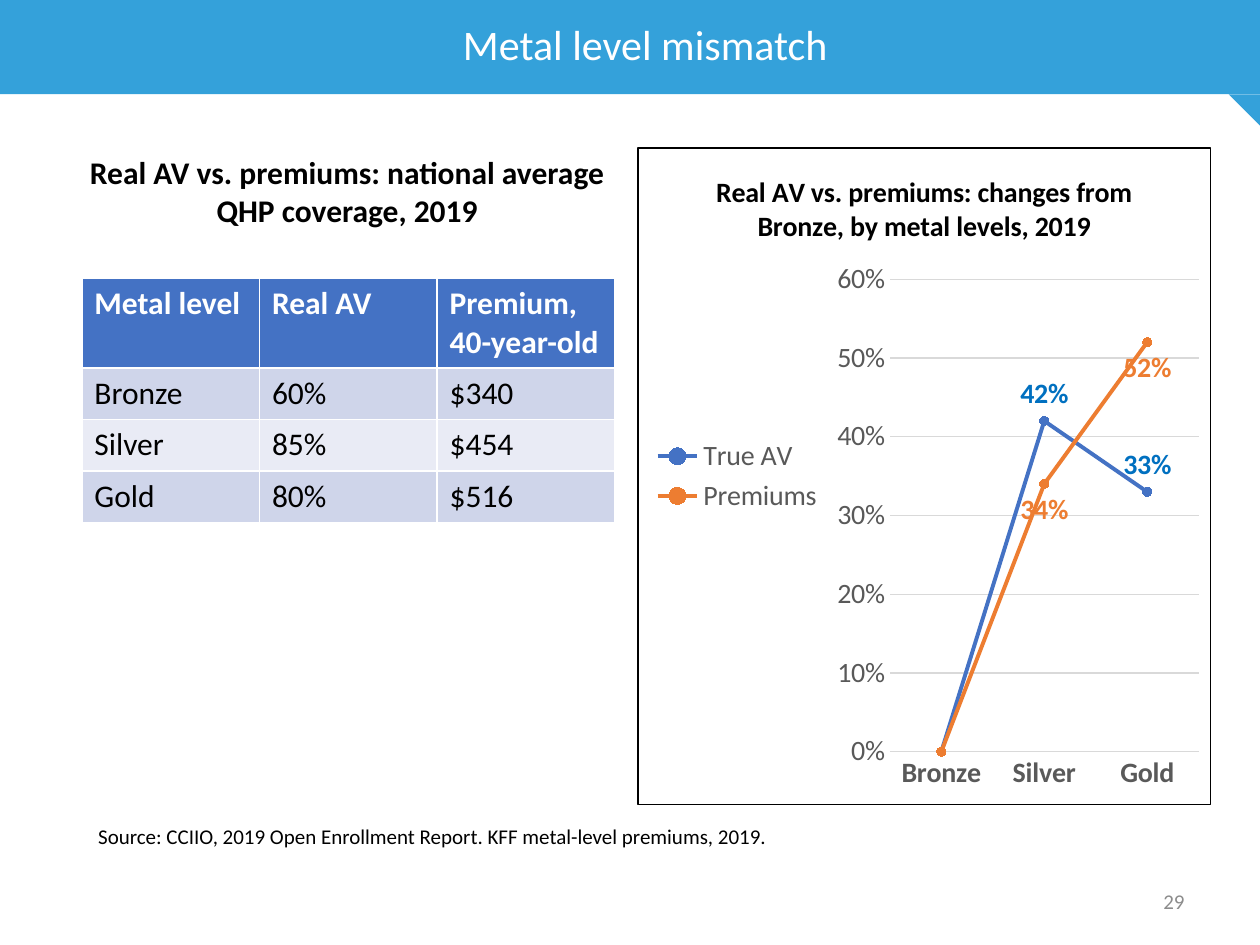
from lxml import etree
from pptx import Presentation
from pptx.chart.data import CategoryChartData
from pptx.dml.color import RGBColor
from pptx.enum.chart import (XL_CHART_TYPE, XL_LABEL_POSITION, XL_LEGEND_POSITION,
                             XL_MARKER_STYLE, XL_TICK_MARK)
from pptx.enum.shapes import MSO_SHAPE
from pptx.enum.text import MSO_ANCHOR, MSO_AUTO_SIZE, PP_ALIGN
from pptx.oxml import parse_xml
from pptx.util import Cm, Pt

CENTER, LEFT = PP_ALIGN.CENTER, PP_ALIGN.LEFT
TOP, MIDDLE = MSO_ANCHOR.TOP, MSO_ANCHOR.MIDDLE
NO_TICK = XL_TICK_MARK.NONE
ABOVE, BELOW = XL_LABEL_POSITION.ABOVE, XL_LABEL_POSITION.BELOW

FONT = "Calibri"
COLORS = {
    "band": "34A1DA", "white": "FFFFFF", "black": "000000", "number": "8C8C8C",
    "header": "4472C4", "odd": "CFD5EA", "even": "E9EBF5",
    "axis": "595959", "grid": "D9D9D9",
    "av": "4472C4", "av_label": "0070C0", "premium": "ED7D31",
}
CHART_NS = "http://schemas.openxmlformats.org/drawingml/2006/chart"
DRAWING_NS = "http://schemas.openxmlformats.org/drawingml/2006/main"
XMLNS = f'xmlns:c="{CHART_NS}" xmlns:a="{DRAWING_NS}"'

METAL_ROWS = [
    ("Metal level", "Real AV", "Premium, 40-year-old"),
    ("Bronze", "60%", "$340"),
    ("Silver", "85%", "$454"),
    ("Gold", "80%", "$516"),
]
CHANGES = [
    ("True AV", (0, 0.42, 0.33), "av", "av_label", ABOVE),
    ("Premiums", (0, 0.34, 0.52), "premium", "premium", BELOW),
]


def set_all(target, values):
    for name, value in values.items():
        setattr(target, name, value)


def rgb(color):
    return RGBColor.from_string(COLORS[color])


def paint(fill, color):
    fill.solid()
    fill.fore_color.rgb = rgb(color)


def draw_line(line, color, width):
    line.color.rgb = rgb(color)
    line.width = Pt(width)


class SlideBuilder:
    def __init__(self, presentation):
        self.slide = presentation.slides.add_slide(presentation.slide_layouts[5])
        self.shapes = self.slide.shapes

    def style(self, font, size, color="black", bold=False):
        set_all(font, {"name": FONT, "size": Pt(size), "bold": bold})
        font.color.rgb = rgb(color)

    def shape(self, preset, box, color, rotation=0):
        shape = self.shapes.add_shape(preset, *map(Cm, box))
        paint(shape.fill, color)
        shape.line.fill.background()
        shape.shadow.inherit = False
        shape.rotation = rotation

    def title(self, text, box):
        title = self.shapes.title
        # The band is drawn first, so the title goes in front of it
        self.shapes._spTree.append(title._element)
        set_all(title, dict(zip(("left", "top", "width", "height"), map(Cm, box))))
        frame = title.text_frame
        set_all(frame, {"text": text, "vertical_anchor": MIDDLE, "margin_left": Cm(0.89),
                        "auto_size": MSO_AUTO_SIZE.NONE})
        set_all(frame.paragraphs[0], {"alignment": CENTER, "line_spacing": 0.9})
        self.style(frame.paragraphs[0].runs[0].font, 24, "white")

    def text(self, text, box, size, color="black", bold=False, align=LEFT, anchor=TOP):
        frame = self.shapes.add_textbox(*map(Cm, box)).text_frame
        set_all(frame, {"text": text, "word_wrap": True, "vertical_anchor": anchor})
        frame.paragraphs[0].alignment = align
        self.style(frame.paragraphs[0].runs[0].font, size, color, bold)

    def table(self, rows, box, row_heights):
        table = self.shapes.add_table(len(rows), len(rows[0]), *map(Cm, box)).table
        for r, (values, height) in enumerate(zip(rows, row_heights)):
            table.rows[r].height = Cm(height)
            is_header = r == 0
            fill = "header" if is_header else ("even", "odd")[r % 2]
            for c, value in enumerate(values):
                cell = table.cell(r, c)
                cell.text = value
                paint(cell.fill, fill)
                self.style(cell.text_frame.paragraphs[0].runs[0].font, 18,
                           "white" if is_header else "black", is_header)

    def line_chart(self, title, categories, rows, box):
        data = CategoryChartData(number_format="0%")
        data.categories = categories
        for name, values, *_ in rows:
            data.add_series(name, values)
        chart = self.shapes.add_chart(XL_CHART_TYPE.LINE_MARKERS, *map(Cm, box), data).chart
        self.style(chart.font, 10)
        chart.chart_title.text_frame.text = title
        self.style(chart.chart_title.text_frame.paragraphs[0].runs[0].font, 16, bold=True)
        chart.chart_title.include_in_layout = False
        chart.has_legend = True
        set_all(chart.legend, {"position": XL_LEGEND_POSITION.LEFT, "include_in_layout": False})
        self.style(chart.legend.font, 16, "axis")
        self.axes(chart)
        chart.plots[0].vary_by_categories = False
        for series, (_, _, color, label_color, position) in zip(chart.plots[0].series, rows):
            self.series(series, color, label_color, position)
        self.frame_chart(chart)

    def axes(self, chart):
        for axis, bold in ((chart.category_axis, True), (chart.value_axis, False)):
            set_all(axis, {"major_tick_mark": NO_TICK, "minor_tick_mark": NO_TICK})
            self.style(axis.tick_labels.font, 16, "axis", bold)
        draw_line(chart.category_axis.format.line, "grid", 0.75)
        values = chart.value_axis
        set_all(values, {"minimum_scale": 0, "maximum_scale": 0.6, "major_unit": 0.1})
        set_all(values.tick_labels, {"number_format": "0%", "number_format_is_linked": False})
        values.format.line.fill.background()
        draw_line(values.major_gridlines.format.line, "grid", 0.75)

    def series(self, series, color, label_color, position):
        series.smooth = False
        draw_line(series.format.line, color, 2.25)
        set_all(series.marker, {"style": XL_MARKER_STYLE.CIRCLE, "size": 5})
        paint(series.marker.format.fill, color)
        draw_line(series.marker.format.line, color, 0.75)
        labels = series.data_labels
        set_all(labels, {"show_value": True, "position": position,
                         "number_format": "0%", "number_format_is_linked": False})
        self.style(labels.font, 16, label_color, True)
        # The shared starting point at 0% has no label
        labels._element.insert(0, parse_xml(
            f'<c:dLbl {XMLNS}><c:idx val="0"/><c:delete val="1"/></c:dLbl>'))

    def frame_chart(self, chart):
        """Fix the plot area inside the chart and draw the outer border."""
        layout = parse_xml(
            f'<c:layout {XMLNS}><c:manualLayout><c:layoutTarget val="inner"/>'
            '<c:xMode val="edge"/><c:yMode val="edge"/></c:manualLayout></c:layout>')
        for side, share in (("x", 0.44), ("y", 0.2), ("w", 0.54), ("h", 0.72)):
            etree.SubElement(layout[0], f"{{{CHART_NS}}}{side}").set("val", str(share))
        plot_area = chart._chartSpace.chart.plotArea
        for old_layout in plot_area.findall(f"{{{CHART_NS}}}layout"):
            plot_area.remove(old_layout)
        plot_area.insert(0, layout)
        chart._chartSpace.chart.addnext(parse_xml(
            f'<c:spPr {XMLNS}><a:noFill/><a:ln w="9525"><a:solidFill>'
            f'<a:srgbClr val="{COLORS["black"]}"/></a:solidFill></a:ln></c:spPr>'))


def main():
    presentation = Presentation()
    presentation.slide_width, presentation.slide_height = Cm(25.4), Cm(19.05)
    slide = SlideBuilder(presentation)
    slide.shape(MSO_SHAPE.RECTANGLE, (0, 0, 25.4, 1.9), "band")
    slide.shape(MSO_SHAPE.RIGHT_TRIANGLE, (24.77, 1.9, 0.63, 0.63), "band", rotation=180)
    slide.table(METAL_ROWS, (1.65, 5.61, 10.74, 4.87), (1.75, 1.04, 1.04, 1.04))
    slide.text("29", (22.94, 17.65, 1.45, 1.02), 12, "number", align=CENTER, anchor=MIDDLE)
    slide.title("Metal level mismatch", (1.35, 0, 22.68, 1.9))
    slide.text("Real AV vs. premiums: national average QHP coverage, 2019",
               (1.35, 2.97, 11.3, 1.8), 18, bold=True, align=CENTER)
    slide.line_chart("Real AV vs. premiums: changes from Bronze, by metal levels, 2019",
                     [row[0] for row in METAL_ROWS[1:]], CHANGES, (12.85, 2.97, 11.56, 13.26))
    slide.text("Source: CCIIO, 2019 Open Enrollment Report. KFF metal-level premiums, 2019.",
               (1.73, 16.48, 20.35, 0.76), 12)
    presentation.save("out.pptx")


if __name__ == "__main__":
    main()
